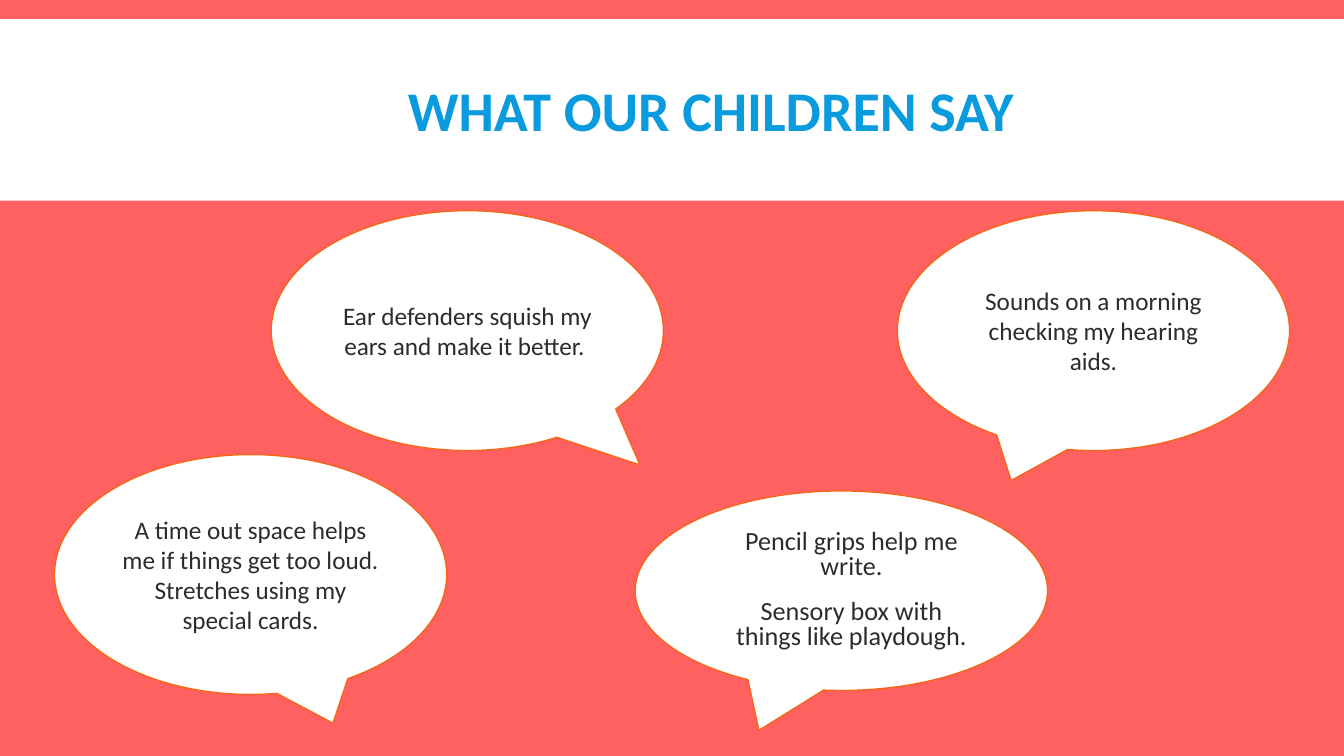
from pptx import Presentation
from pptx.dml.color import RGBColor
from pptx.enum import shapes, text
from pptx.util import Inches, Pt

FONT = "Calibri"
COLOURS = {
    "background": "FF6161",
    "white": "FFFFFF",
    "title": "099BDD",
    "outline": "F56617",
    "quote": "2C2C2C",
}
# (left, top, width, height), (tail x, tail y), paragraphs
QUOTES = [
    ((2.69, 2.09, 3.89, 2.38), (0.44, 0.56),
     ["Ear defenders squish my ears and make it better. "]),
    ((0.54, 4.51, 3.89, 2.38), (0.21, 0.62),
     ["A time out space helps me if things get too loud. ",
      "Stretches using my special cards."]),
    ((8.9, 2.09, 3.89, 2.38), (-0.21, 0.625),
     ["Sounds on a morning checking my hearing aids."]),
]
TOOLS_QUOTE = ((6.3, 4.87, 4.09, 1.98), (-0.2, 0.7),
               ["Pencil grips help me write.",
                "Sensory box with things like playdough."])


def colour(name):
    return RGBColor.from_string(COLOURS[name])


def add_run(paragraph, words, size, colour_name, bold=False):
    run = paragraph.add_run()
    run.text = words
    run.font.name = FONT
    run.font.size = Pt(size)
    run.font.bold = bold
    run.font.color.rgb = colour(colour_name)


def add_white_shape(slide, kind, box):
    shape = slide.shapes.add_shape(kind, *map(Inches, box))
    shape.shadow.inherit = False
    shape.fill.solid()
    shape.fill.fore_color.rgb = colour("white")
    return shape


def add_title_band(slide):
    """Add the white strip and send it behind the title."""
    band = add_white_shape(slide, shapes.MSO_SHAPE.RECTANGLE, (0, 0.19, 13.33, 1.8))
    band.line.fill.background()
    slide.shapes._spTree.insert(2, band._element)


def set_title(slide, words):
    title = slide.shapes.title
    title.left, title.top = Inches(1.32), Inches(0.31)
    title.width, title.height = Inches(11.46), Inches(1.65)
    frame = title.text_frame
    frame.word_wrap = True
    frame.vertical_anchor = text.MSO_ANCHOR.MIDDLE
    heading = frame.paragraphs[0]
    heading.alignment = text.PP_ALIGN.CENTER
    heading.line_spacing = 0.85
    add_run(heading, words, 40, "title", bold=True)


def add_speech_bubble(slide, box, tail, quotes, size=18):
    bubble = add_white_shape(slide, shapes.MSO_SHAPE.OVAL_CALLOUT, box)
    bubble.adjustments[0], bubble.adjustments[1] = tail
    bubble.line.color.rgb = colour("outline")
    bubble.line.width = Pt(1)
    frame = bubble.text_frame
    frame.word_wrap = True
    frame.vertical_anchor = text.MSO_ANCHOR.MIDDLE
    for index, quote in enumerate(quotes):
        paragraph = frame.add_paragraph() if index else frame.paragraphs[0]
        paragraph.alignment = text.PP_ALIGN.CENTER
        add_run(paragraph, quote, size, "quote")
    return bubble


def tighten_paragraphs(bubble):
    """Close up the lines, space out the paragraphs and indent them."""
    for paragraph in bubble.text_frame.paragraphs:
        paragraph.line_spacing = 0.8
        paragraph.space_before = Pt(12)
        paragraph.space_after = Pt(2)
        paragraph._p.get_or_add_pPr().set("marL", str(Inches(0.2)))


def main():
    deck = Presentation()
    deck.slide_width, deck.slide_height = Inches(13.33), Inches(7.5)
    slide = deck.slides.add_slide(deck.slide_layouts[5])
    slide.background.fill.solid()
    slide.background.fill.fore_color.rgb = colour("background")

    add_title_band(slide)
    set_title(slide, "WHAT OUR CHILDREN SAY")
    tighten_paragraphs(add_speech_bubble(slide, *TOOLS_QUOTE, size=18.7))
    for box, tail, quotes in QUOTES:
        add_speech_bubble(slide, box, tail, quotes)

    deck.save("out.pptx")


if __name__ == "__main__":
    main()
